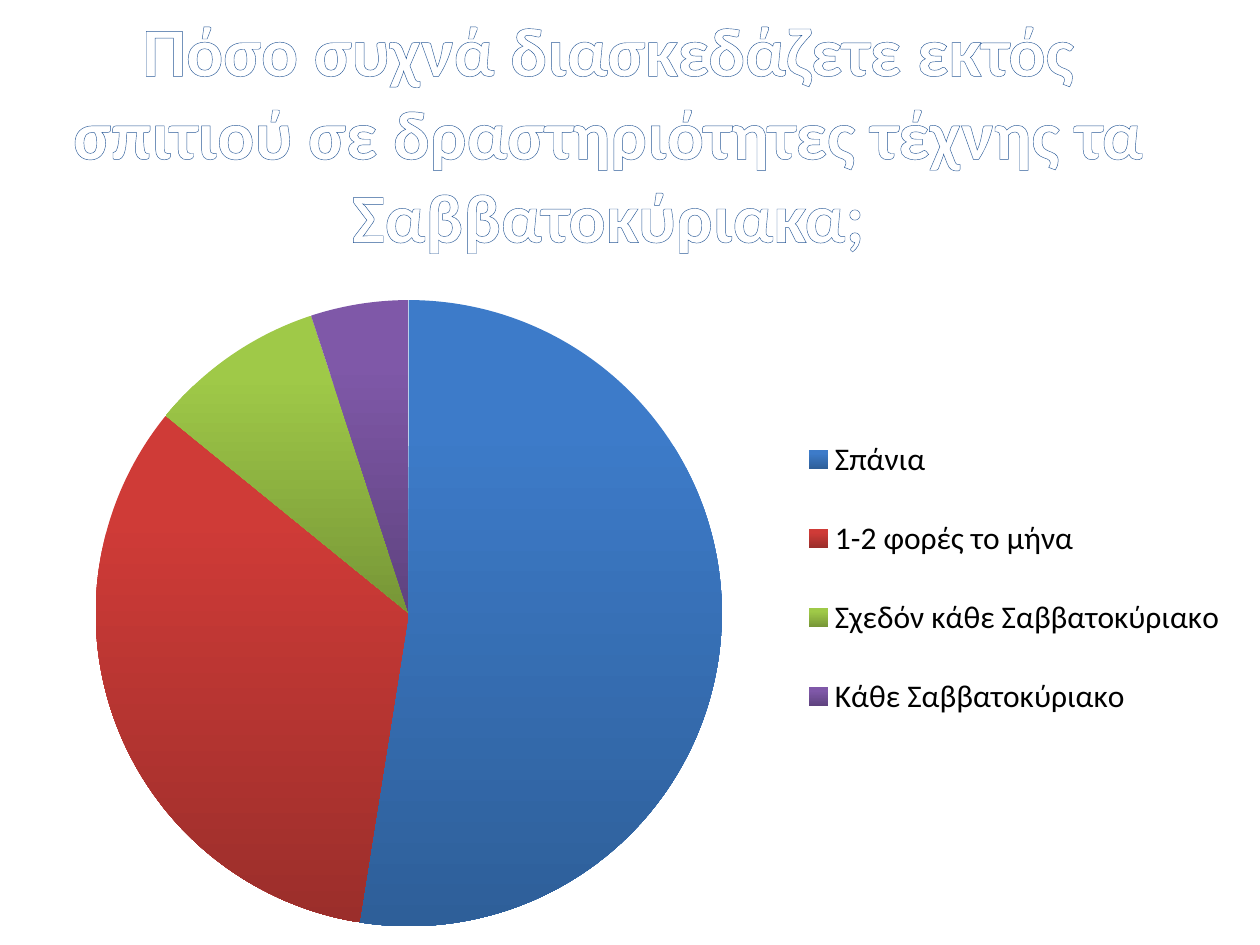
from lxml import etree
from pptx import Presentation
from pptx import util as u
from pptx.chart import data as chart_data
from pptx.dml.color import RGBColor
from pptx.enum import chart as charts, text
from pptx.oxml import ns

WIDTH, HEIGHT = 10, 7.5
FONT = "Calibri"
QUESTION = "Πόσο συχνά διασκεδάζετε εκτός σπιτιού σε δραστηριότητες τέχνης τα Σαββατοκύριακα;"
ANSWERS = [
    ("Σπάνια", 52, "3D7BC9", "2E5F99"),
    ("1-2 φορές το μήνα", 33, "CF3B37", "9B2E2B"),
    ("Σχεδόν κάθε Σαββατοκύριακο", 9, "9FC948", "779637"),
    ("Κάθε Σαββατοκύριακο", 5, "7F58A8", "5F437F"),
]
OUTLINE_STOPS = [(0, "7EA6EA"), (75000, "2A5A98"), (100000, "1F4A82")]
PIE_AREA = {"x": 0.076, "y": 0.025, "w": 0.497, "h": 0.947}
LEGEND_AREA = {"x": 0.62, "y": 0.175, "w": 0.37, "h": 0.54}


def color(value):
    return RGBColor.from_string(value)


def apply_format(target, values):
    for name, value in values.items():
        setattr(target, name, value)


def child(parent, tag, **attributes):
    return etree.SubElement(parent, ns.qn(tag), attributes)


def outline_text(span, width):
    properties = span.font._element
    line = etree.Element(ns.qn("a:ln"), {"w": str(u.Pt(width))})
    properties.insert(0, line)
    gradient = child(line, "a:gradFill")
    stops = child(gradient, "a:gsLst")
    for position, value in OUTLINE_STOPS:
        stop = child(stops, "a:gs", pos=str(position))
        child(stop, "a:srgbClr", val=value)
    child(gradient, "a:lin", ang="5400000")


def set_layout(element, after, area, inner=False):
    for old in element.findall(ns.qn("c:layout")):
        element.remove(old)
    layout = etree.Element(ns.qn("c:layout"))
    manual = child(layout, "c:manualLayout")
    if inner:
        child(manual, "c:layoutTarget", val="inner")
    for axis in "xy":
        child(manual, f"c:{axis}Mode", val="edge")
    for name, share in area.items():
        child(manual, f"c:{name}", val=str(share))
    if after is None:
        element.insert(0, layout)
    else:
        after.addnext(layout)


def add_title(page, area):
    box = page.shapes.add_textbox(*area)
    apply_format(box.text_frame, {
        "word_wrap": True,
        "auto_size": text.MSO_AUTO_SIZE.NONE,
        "vertical_anchor": text.MSO_ANCHOR.MIDDLE,
    })
    para = box.text_frame.paragraphs[0]
    para.alignment = text.PP_ALIGN.CENTER
    span = para.add_run()
    span.text = QUESTION
    apply_format(span.font, {"name": FONT, "size": u.Pt(39.6), "bold": True})
    span.font.color.rgb = color("FFFFFF")
    outline_text(span, 2.48)


def add_pie(page, area):
    labels, values, tops, bottoms = zip(*ANSWERS)
    table = chart_data.CategoryChartData()
    table.categories = labels
    table.add_series("Series 1", values)
    chart = page.shapes.add_chart(charts.XL_CHART_TYPE.PIE, *area, table).chart
    apply_format(chart, {"has_title": False, "has_legend": True})
    apply_format(chart.font, {"name": FONT, "size": u.Pt(18)})
    chart.font.color.rgb = color("000000")
    apply_format(chart.legend, {
        "position": charts.XL_LEGEND_POSITION.RIGHT,
        "include_in_layout": False,
    })
    plot = chart.plots[0]
    plot.vary_by_categories = True
    for index, shades in enumerate(zip(tops, bottoms)):
        form = plot.series[0].points[index].format
        form.line.fill.background()
        form.fill.gradient()
        form.fill.gradient_angle = 270
        for stop, shade, position in zip(form.fill.gradient_stops, shades, (0.2, 1)):
            stop.color.rgb = color(shade)
            stop.position = position
    legend = chart.legend._element
    set_layout(legend, legend.find(ns.qn("c:legendPos")), LEGEND_AREA)
    set_layout(plot._element.getparent(), None, PIE_AREA, inner=True)


def main():
    deck = Presentation()
    apply_format(deck, {"slide_width": u.Inches(WIDTH), "slide_height": u.Inches(HEIGHT)})
    page = deck.slides.add_slide(deck.slide_layouts[6])
    add_title(page, [u.Inches(length) for length in (0.33, 0.42, 9, 1.25)])
    add_pie(page, [u.Inches(length) for length in (0, HEIGHT * 0.3, WIDTH, HEIGHT * 0.7)])
    deck.save("out.pptx")


if __name__ == "__main__":
    main()
